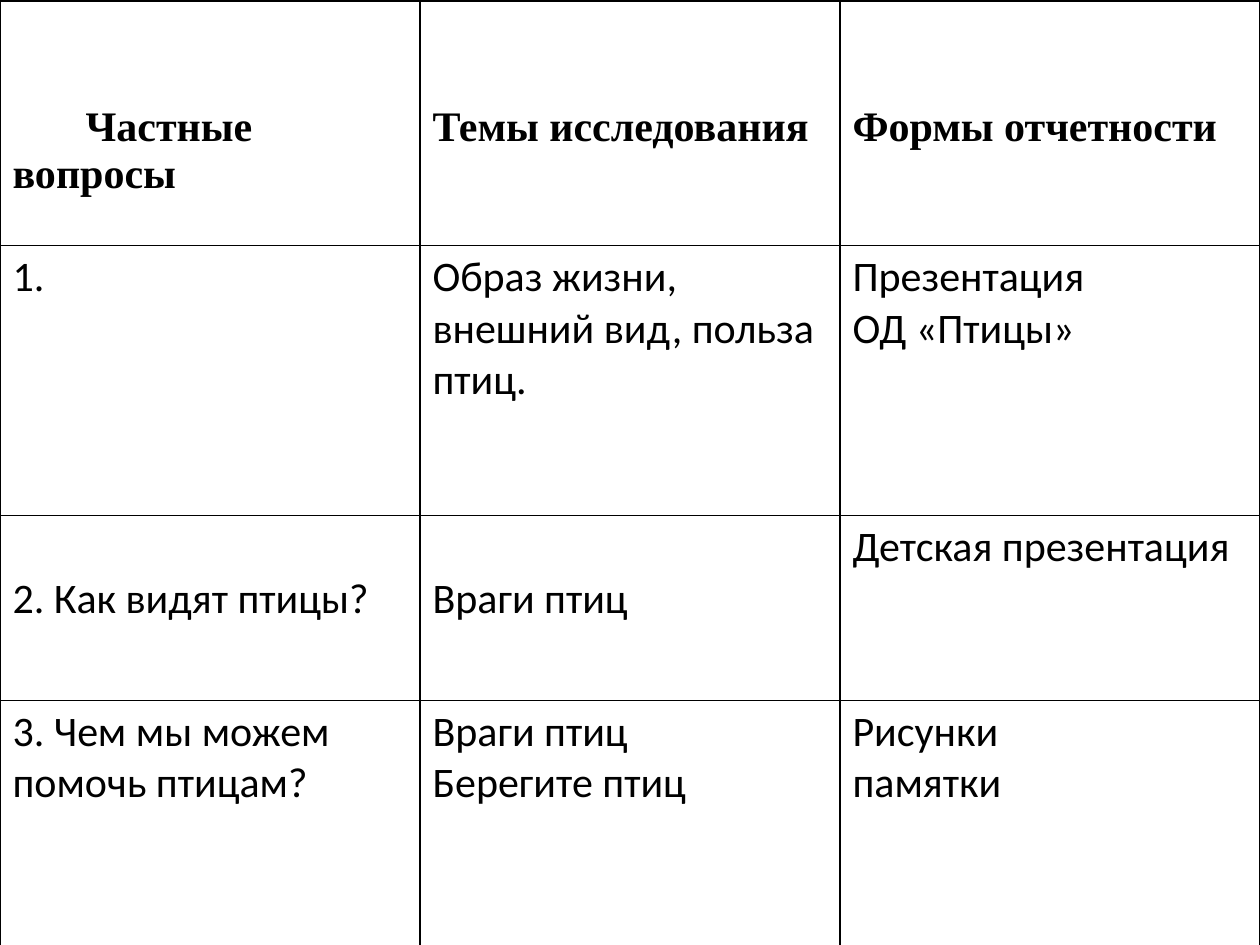
from dataclasses import dataclass

from lxml.etree import SubElement
from pptx import Presentation
from pptx.dml.color import RGBColor
from pptx.oxml.ns import qn
from pptx.table import _Cell as Cell
from pptx.util import Inches, Pt


@dataclass(frozen=True)
class Theme:
    text: str = "000000"
    fill: str = "FFFFFF"
    border: str = "000000"
    header_font: str = "Times New Roman"
    body_font: str = "Calibri"
    size: int = 24
    border_width: int = 1


@dataclass(frozen=True)
class Entry:
    text: str
    top: float = 0.05
    indent: float = 0
    header: bool = False


THEME = Theme()
SLIDE_WIDTH, SLIDE_HEIGHT = 10, 7.5
TABLE_TOP = 0.01
ROW_HEIGHTS = (1.94, 2.14, 1.47, 2.93)
HEADER_TOP = 0.82
LOWERED_TOP = 0.46

ROWS = (
    (
        Entry("Частные вопросы", HEADER_TOP, indent=0.58, header=True),
        Entry("Темы исследования", HEADER_TOP, header=True),
        Entry("Формы отчетности", HEADER_TOP, header=True),
    ),
    (
        Entry("1."),
        Entry("Образ жизни, внешний вид, польза птиц."),
        Entry("Презентация\nОД «Птицы»"),
    ),
    (
        Entry("2. Как видят птицы?", LOWERED_TOP),
        Entry("Враги птиц", LOWERED_TOP),
        Entry("Детская презентация"),
    ),
    (
        Entry("3. Чем мы можем помочь птицам?"),
        Entry("Враги птиц\nБерегите птиц"),
        Entry("Рисунки\nпамятки"),
    ),
)


def add_borders(cell: Cell) -> None:
    properties = cell._tc.get_or_add_tcPr()
    for side in ("a:lnL", "a:lnR", "a:lnT", "a:lnB"):
        line = SubElement(properties, qn(side), w=str(Pt(THEME.border_width)))
        fill = SubElement(line, qn("a:solidFill"))
        SubElement(fill, qn("a:srgbClr"), val=THEME.border)


def fill_cell(cell: Cell, entry: Entry) -> None:
    add_borders(cell)
    cell.fill.solid()
    cell.fill.fore_color.rgb = RGBColor.from_string(THEME.fill)
    cell.margin_left = cell.margin_right = Inches(0.1)
    cell.margin_top = Inches(entry.top)
    cell.margin_bottom = Inches(0.05)
    cell.text_frame.text = entry.text
    for paragraph in cell.text_frame.paragraphs:
        if entry.indent:
            paragraph._p.get_or_add_pPr().set("indent", str(Inches(entry.indent)))
        for run in paragraph.runs:
            run.font.name = THEME.header_font if entry.header else THEME.body_font
            run.font.size = Pt(THEME.size)
            run.font.bold = entry.header
            run.font.color.rgb = RGBColor.from_string(THEME.text)


def main() -> None:
    presentation = Presentation()
    presentation.slide_width = Inches(SLIDE_WIDTH)
    presentation.slide_height = Inches(SLIDE_HEIGHT)
    slide = presentation.slides.add_slide(presentation.slide_layouts[6])

    table = slide.shapes.add_table(
        len(ROWS), len(ROWS[0]),
        Inches(0), Inches(TABLE_TOP), Inches(SLIDE_WIDTH), Inches(sum(ROW_HEIGHTS)),
    ).table
    table.first_row = False
    table.horz_banding = False
    for row, height, entries in zip(table.rows, ROW_HEIGHTS, ROWS):
        row.height = Inches(height)
        for cell, entry in zip(row.cells, entries):
            fill_cell(cell, entry)

    presentation.save("out.pptx")


if __name__ == "__main__":
    main()
